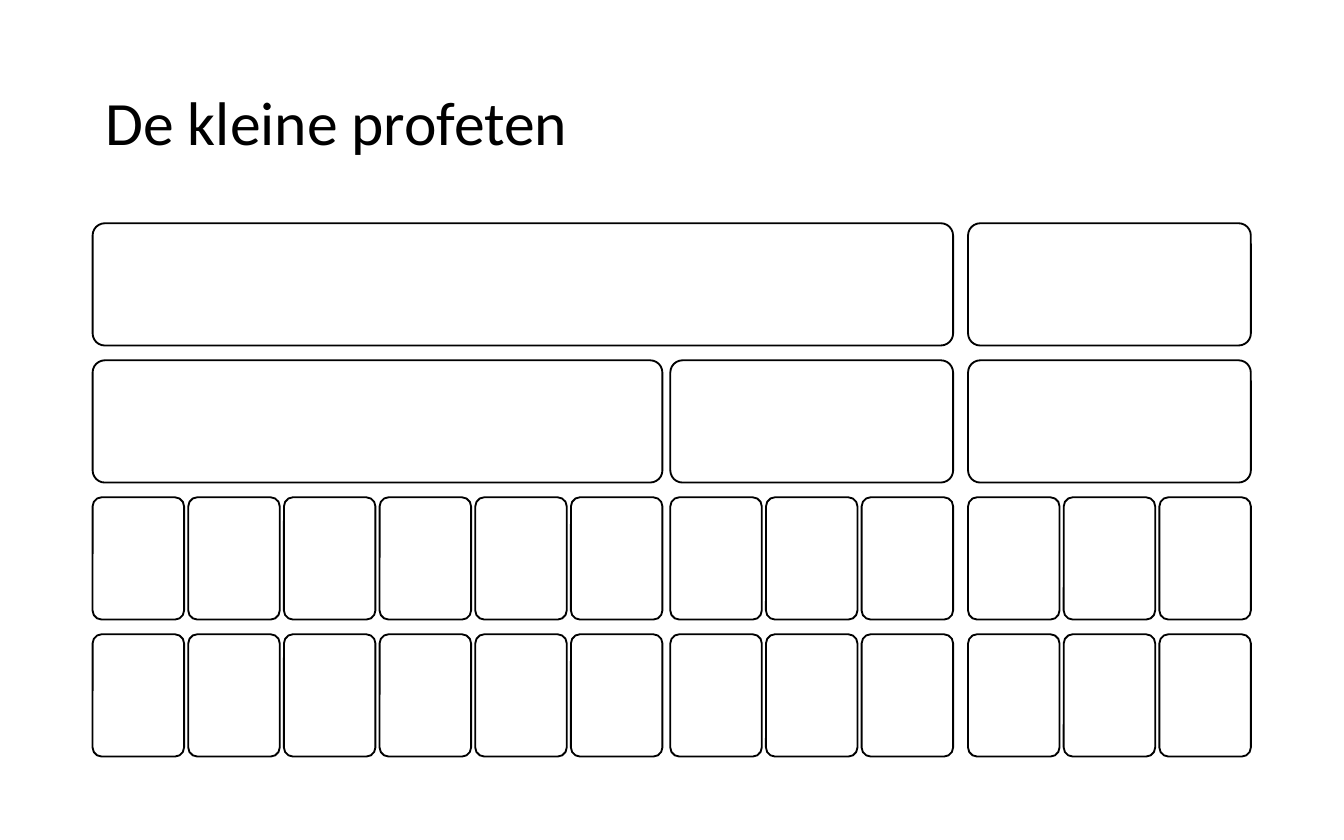
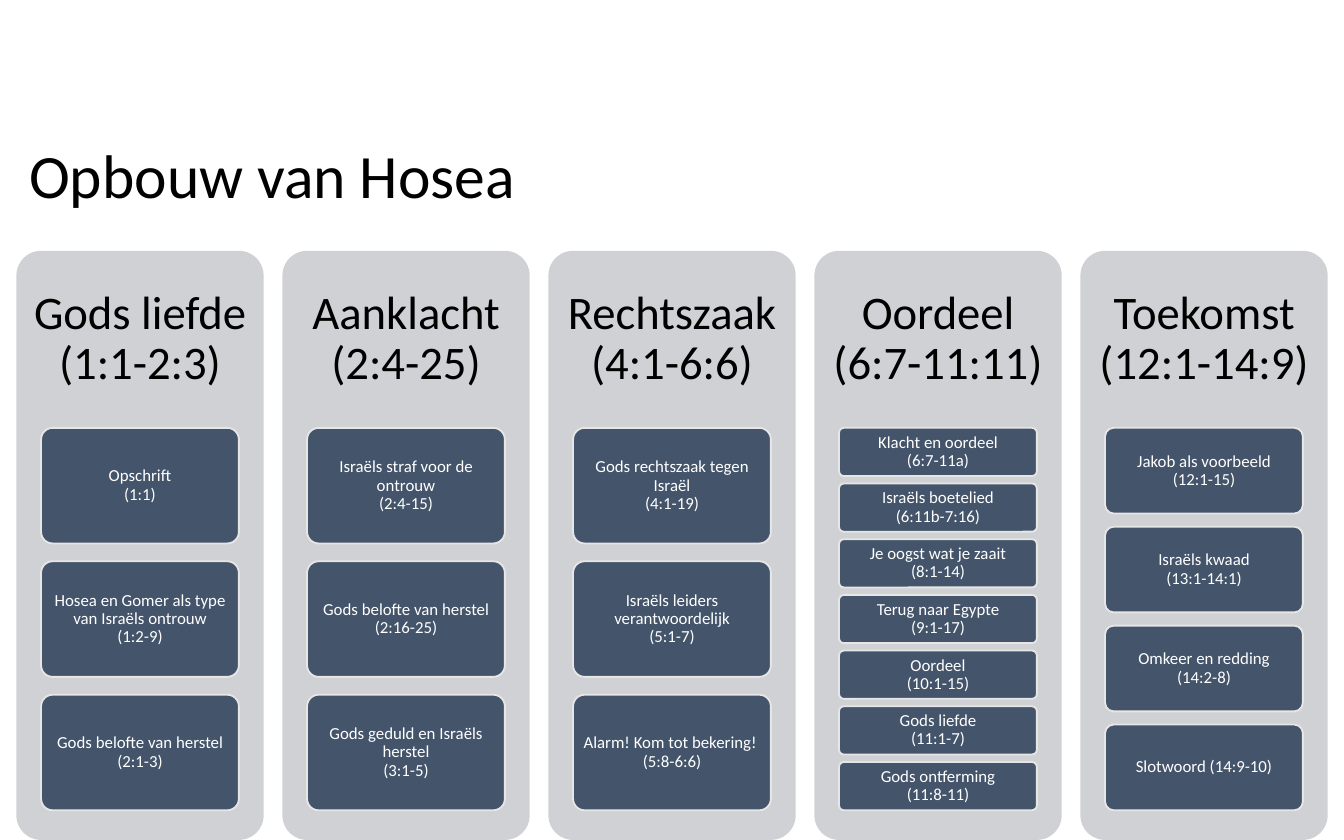
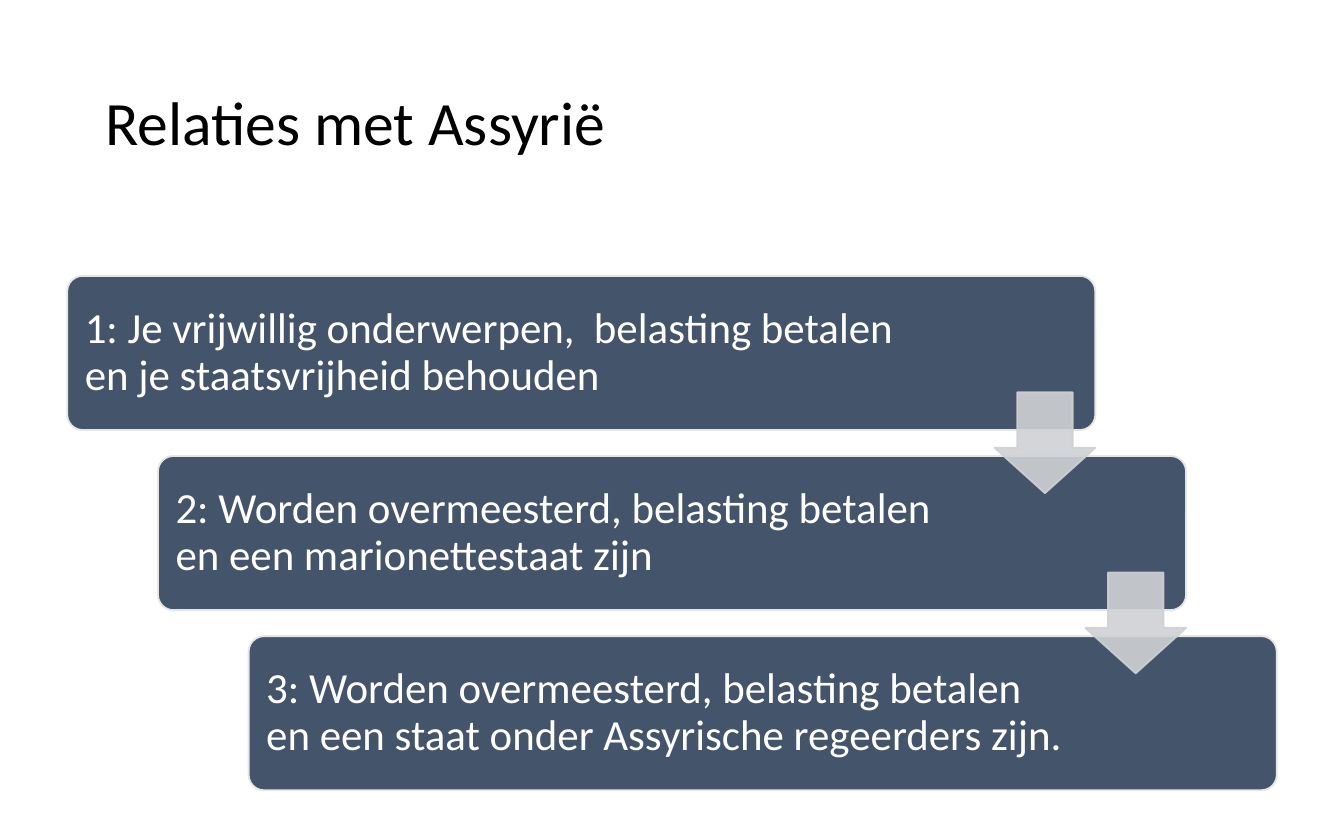
"""Build three slides on the minor prophets, Hosea and Assyria."""
import pptx
import pptx.util
import pptx.dml.color
import pptx.enum.shapes
import pptx.enum.text
import pptx.oxml
import pptx.oxml.ns

Pt = pptx.util.Pt
Kind = pptx.enum.shapes.MSO_SHAPE
Align = pptx.enum.text.PP_ALIGN
BLACK, WHITE = "000000", "FFFFFF"
NAVY, GREY, PALE = "44546A", "CFD1D4", "E7E6E6"
FONT = "Calibri"


def paint(fill, color, alpha=None):
    fill.solid()
    fill.fore_color.rgb = pptx.dml.color.RGBColor.from_string(color)
    if alpha:
        for node in fill._xPr.iter(pptx.oxml.ns.qn("a:srgbClr")):
            tag = pptx.oxml.ns.qn("a:alpha")
            node.makeelement(tag, {"val": str(alpha * 1000)})
            node.append(node.makeelement(tag, {"val": str(alpha * 1000)}))


def write(slide, text, place, size=9, color=WHITE, align=Align.LEFT,
          pad=(7.2, 3.6, 7.2, 3.6), kind=None, fill=None, edge=None,
          adjust=(0.1,), alpha=None):
    place = [Pt(n) for n in place]
    if kind is None:
        shape = slide.shapes.add_textbox(*place)
    else:
        shape = slide.shapes.add_shape(kind, *place)
        shape.shadow.inherit = False
        for i, value in enumerate(adjust):
            shape.adjustments[i] = value
        paint(shape.fill, fill, alpha)
        if edge:
            shape.line.width = Pt(1)
            paint(shape.line.fill, edge, alpha)
        else:
            shape.line.fill.background()
    if not text:
        return
    frame = shape.text_frame
    frame.word_wrap = True
    frame.vertical_anchor = pptx.enum.text.MSO_ANCHOR.MIDDLE
    frame.margin_left, frame.margin_top, frame.margin_right, frame.margin_bottom = (
        Pt(n) for n in pad)
    para = frame.paragraphs[0]
    para.text = text
    para.alignment = align
    para.line_spacing = 0.9
    for run in para.runs:
        run.font.name = FONT
        run.font.size = Pt(size)
        paint(run.font.fill, color)


deck = pptx.Presentation()
deck.slide_width, deck.slide_height = Pt(720), Pt(450)

TOP = (49.5, 24, 621, 87)
slides = []
for title, place in (
    ("De kleine profeten", TOP),
    ("Opbouw van Hosea", (8.6, 60.5, 675.4, 69.8)),
    ("Relaties met Assyrië", TOP),
):
    slide = deck.slides.add_slide(deck.slide_layouts[6])
    write(slide, title, place, size=33, color=BLACK)
    slides.append(slide)
grid, hosea, steps = slides

cell = 49
cols = [left + 51.25 * i
        for left, count in ((49.6, 6), (359.1, 3), (518.6, 3))
        for i in range(count)]
single = [(i, i) for i in range(12)]
rows = [[(0, 8), (9, 11)], [(0, 5), (6, 8), (9, 11)], single, single]
for r, spans in enumerate(rows):
    for first, last in spans:
        width = cols[last] + cell - cols[first]
        write(grid, "", (cols[first], 119.6 + 73.4 * r, width, 65.5),
              kind=Kind.ROUNDED_RECTANGLE, fill=WHITE, edge=BLACK)

parts = [
    ("Gods liefde (1:1-2:3)", [
        "Opschrift\n(1:1)",
        "Hosea en Gomer als type van Israëls ontrouw\n(1:2-9)",
        "Gods belofte van herstel (2:1-3)"]),
    ("Aanklacht (2:4-25)", [
        "Israëls straf voor de ontrouw\n(2:4-15)",
        "Gods belofte van herstel (2:16-25)",
        "Gods geduld en Israëls herstel\n(3:1-5)"]),
    ("Rechtszaak\n(4:1-6:6)", [
        "Gods rechtszaak tegen Israël\n(4:1-19)",
        "Israëls leiders verantwoordelijk\n(5:1-7)",
        "Alarm! Kom tot bekering! \n(5:8-6:6)"]),
    ("Oordeel\n(6:7-11:11)", [
        "Klacht en oordeel\n(6:7-11a)",
        "Israëls boetelied\n(6:11b-7:16)",
        "Je oogst wat je zaait\n(8:1-14)",
        "Terug naar Egypte\n(9:1-17)",
        "Oordeel\n(10:1-15)",
        "Gods liefde\n(11:1-7)",
        "Gods ontferming\n(11:8-11)"]),
    ("Toekomst\n(12:1-14:9)", [
        "Jakob als voorbeeld\n(12:1-15)",
        "Israëls kwaad\n(13:1-14:1)",
        "Omkeer en redding\n(14:2-8)",
        "Slotwoord (14:9-10)"]),
]
ratio = 2 / 13
for i, (head, items) in enumerate(parts):
    left = 8.8 + 142.5 * i
    write(hosea, "", (left, 134.4, 132.5, 315.6),
          kind=Kind.ROUNDED_RECTANGLE, fill=GREY)
    write(hosea, head, (left, 134.4, 132.5, 94.7), size=25, color=BLACK,
          align=Align.CENTER, pad=(6.8,) * 4)
    high = 204.9 / (len(items) + (len(items) - 1) * ratio)
    for j, item in enumerate(items):
        y = 229.2 + j * high * (1 + ratio)
        write(hosea, item, (left + 13.2, y, 106, high), align=Align.CENTER,
              pad=(2, 1.5, 2, 1.5), kind=Kind.ROUNDED_RECTANGLE,
              fill=NAVY, edge=PALE)

stages = [
    ("1: Je vrijwillig onderwerpen,  belasting betalen en je staatsvrijheid behouden", 91),
    ("2: Worden overmeesterd, belasting betalen en een marionettestaat zijn", 109),
    ("3: Worden overmeesterd, belasting betalen en een staat onder Assyrische regeerders zijn.", 109),
]
for i, (stage, right) in enumerate(stages):
    write(steps, stage, (36 + 48.6 * i, 147.8 + 96.5 * i, 550.8, 82.6),
          size=23, pad=(7, 7, right, 7), kind=Kind.ROUNDED_RECTANGLE,
          fill=NAVY, edge=PALE)
for i in range(2):
    write(steps, "", (532.8 + 48.6 * i, 210.2 + 96.5 * i, 54, 54),
          kind=Kind.DOWN_ARROW, fill=GREY, edge=GREY,
          adjust=(0.55, 0.45), alpha=90)

deck.save("out.pptx")
